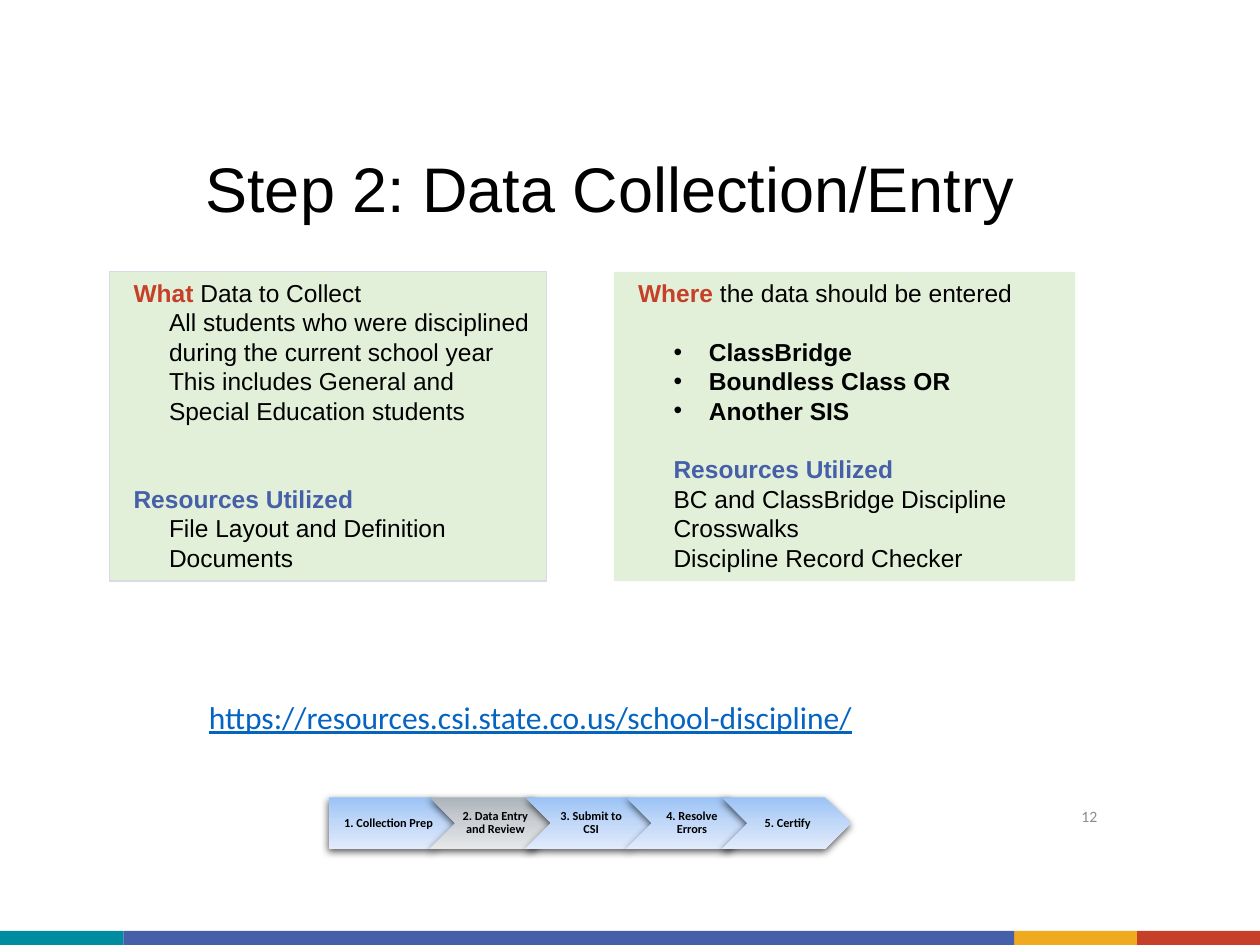
from copy import deepcopy
from dataclasses import dataclass

from lxml import etree
from pptx import Presentation
from pptx.dml.color import RGBColor
from pptx.enum import shapes, text
from pptx.oxml import ns
from pptx.util import Pt

BLACK, RED, BLUE, GREEN = "000000", "C63F28", "455FA9", "E2F0D9"
SKY = ("9AC3F5", "C2D8F8", "E1EBFB")
GRAY = ("ACB4BB", "CCD0D4", "E6E8EA")
LINE = 16.8


@dataclass
class Run:
    text: str
    color: str = BLACK
    bold: bool = False


@dataclass
class Para:
    runs: list[Run]
    level: int = 1
    before: float = 0
    bullet: bool = False


@dataclass
class Panel:
    left: float
    width: float
    paras: list[Para]
    border: str | None = None


@dataclass
class Bar:
    left: float
    width: float
    color: str


@dataclass
class Step:
    label: str
    colors: tuple[str, str, str] = SKY


BARS = [
    Bar(579.5, 70.3, "EFAA1F"),
    Bar(649.8, 70.2, RED),
    Bar(0, 70.5, "008CA0"),
    Bar(70.5, 509, BLUE),
]
PANELS = [
    Panel(62.5, 249.8, [
        Para([Run("What", RED, True), Run(" Data to Collect")], 0),
        Para([Run("All students who were disciplined during the current school year")]),
        Para([Run("This includes General and Special Education students")]),
        Para([Run("Resources Utilized", BLUE, True)], 0, 2 * LINE),
        Para([Run("File Layout and Definition Documents")]),
    ], "D6DCE5"),
    Panel(350.8, 263.6, [
        Para([Run("Where ", RED, True), Run("the data should be entered")], 0),
        Para([Run("ClassBridge", bold=True)], before=LINE, bullet=True),
        Para([Run("Boundless Class OR", bold=True)], bullet=True),
        Para([Run("Another SIS", bold=True)], bullet=True),
        Para([Run("Resources Utilized", BLUE, True)], before=LINE),
        Para([Run("BC and ClassBridge Discipline Crosswalks")]),
        Para([Run("Discipline Record Checker")]),
    ]),
]
STEPS = [
    Step("1. Collection Prep"),
    Step("2. Data Entry and Review", GRAY),
    Step("3. Submit to CSI"),
    Step("4. Resolve Errors"),
    Step("5. Certify"),
]


def rgb(value: str) -> RGBColor:
    return RGBColor.from_string(value)


def set_font(font, name: str, size: float, color: str, bold: bool = False) -> None:
    font.name, font.size, font.bold = name, Pt(size), bold
    font.color.rgb = rgb(color)


def add_rect(tree, left: float, top: float, width: float, height: float,
             fill: str, border: str | None = None):
    sp = tree.add_shape(shapes.MSO_SHAPE.RECTANGLE, Pt(left), Pt(top), Pt(width), Pt(height))
    sp.shadow.inherit = False
    sp.fill.solid()
    sp.fill.fore_color.rgb = rgb(fill)
    if border:
        sp.line.color.rgb = rgb(border)
        sp.line.width = Pt(0.75)
    else:
        sp.line.fill.background()
    return sp


def add_text(tree, left: float, top: float, width: float, height: float, content: str,
             name: str, size: float, color: str, bold: bool = False,
             insets: tuple[float, float, float, float] = (5, 5, 5, 5),
             anchor=text.MSO_ANCHOR.TOP):
    tf = tree.add_textbox(Pt(left), Pt(top), Pt(width), Pt(height)).text_frame
    tf.word_wrap = True
    tf.vertical_anchor = anchor
    tf.margin_left, tf.margin_top, tf.margin_right, tf.margin_bottom = map(Pt, insets)
    tf.text = content
    p = tf.paragraphs[0]
    set_font(p.runs[0].font, name, size, color, bold)
    return p


def add_panel(tree, panel: Panel) -> None:
    tf = add_rect(tree, panel.left, 155.3, panel.width, 176.8, GREEN, panel.border).text_frame
    tf.word_wrap = True
    tf.vertical_anchor = text.MSO_ANCHOR.TOP
    for i, para in enumerate(panel.paras):
        p = tf.add_paragraph() if i else tf.paragraphs[0]
        p.alignment = text.PP_ALIGN.LEFT
        p.level = para.level
        p.space_before = Pt(para.before)
        indent = 47.25 if para.bullet else (6.75, 27)[para.level]
        pPr = p._p.get_or_add_pPr()
        pPr.set("marL", str(Pt(indent)))
        pPr.set("indent", str(Pt(-20.25 if para.bullet else 0)))
        if para.bullet:
            etree.SubElement(pPr, ns.qn("a:buFont"), typeface="Arial")
            etree.SubElement(pPr, ns.qn("a:buChar"), char="•")
        for run in para.runs:
            r = p.add_run()
            r.text = run.text
            set_font(r.font, "Arial", 14, run.color, run.bold)


def add_shadow(sp) -> None:
    sp.shadow.inherit = False
    effects = sp.element.spPr.find(ns.qn("a:effectLst"))
    shadow = etree.SubElement(effects, ns.qn("a:outerShdw"), blurRad=str(Pt(4.5)),
                              dist=str(Pt(1.5)), dir="5400000", rotWithShape="0")
    color = etree.SubElement(shadow, ns.qn("a:srgbClr"), val=BLACK)
    etree.SubElement(color, ns.qn("a:alpha"), val="63000")


def fill_gradient(sp, colors: tuple[str, str, str]) -> None:
    sp.fill.gradient()
    sp.fill.gradient_angle = 270
    stops = sp.element.spPr.find(ns.qn("a:gradFill")).find(ns.qn("a:gsLst"))
    stops.insert(1, deepcopy(stops[0]))
    for stop, position, color in zip(sp.fill.gradient_stops, (0, 0.5, 1), colors):
        stop.position = position
        stop.color.rgb = rgb(color)


def add_step(tree, index: int, step: Step) -> None:
    left, top, height = 187.9 + 56.16 * index + 1.44 * (index % 2), 455.6, 29.5
    kind = shapes.MSO_SHAPE.CHEVRON if index else shapes.MSO_SHAPE.PENTAGON
    sp = tree.add_shape(kind, Pt(left), Pt(top), Pt(73.6), Pt(height))
    sp.line.fill.background()
    fill_gradient(sp, step.colors)
    add_shadow(sp)
    offset, width, inset = (14.8, 44.2, 2) if index else (0, 66.2, 2.7)
    p = add_text(tree, left + offset, top, width, height, step.label, "Calibri", 7, BLACK,
                 True, (inset, 1.3, 0.7, 1.3), text.MSO_ANCHOR.MIDDLE)
    p.alignment = text.PP_ALIGN.CENTER
    p.line_spacing = 0.9
    p.space_after = Pt(2.45)


def main() -> None:
    prs = Presentation()
    prs.slide_width, prs.slide_height = Pt(720), Pt(540)
    s = prs.slides.add_slide(prs.slide_layouts[6])
    for bar in BARS:
        add_rect(s.shapes, bar.left, 532, bar.width, 8, bar.color)
    title = add_text(s.shapes, 112.5, 83.5, 479, 50.5, "Step 2: Data Collection/Entry",
                     "Arial", 36, BLACK, anchor=text.MSO_ANCHOR.BOTTOM)
    title.line_spacing = 0.9
    for panel in PANELS:
        add_panel(s.shapes, panel)
    url = add_text(s.shapes, 112.3, 395.3, 543, 51,
                   "https://resources.csi.state.co.us/school-discipline/",
                   "Calibri", 18, "0563C1", insets=(7.2, 3.6, 7.2, 3.6))
    url.runs[0].font.underline = True
    steps = s.shapes.add_group_shape().shapes
    for i, step in enumerate(STEPS):
        add_step(steps, i, step)
    add_text(s.shapes, 613, 455.8, 32.4, 24.5, "12", "Calibri", 9, "8C8C8C")
    prs.save("out.pptx")


if __name__ == "__main__":
    main()
